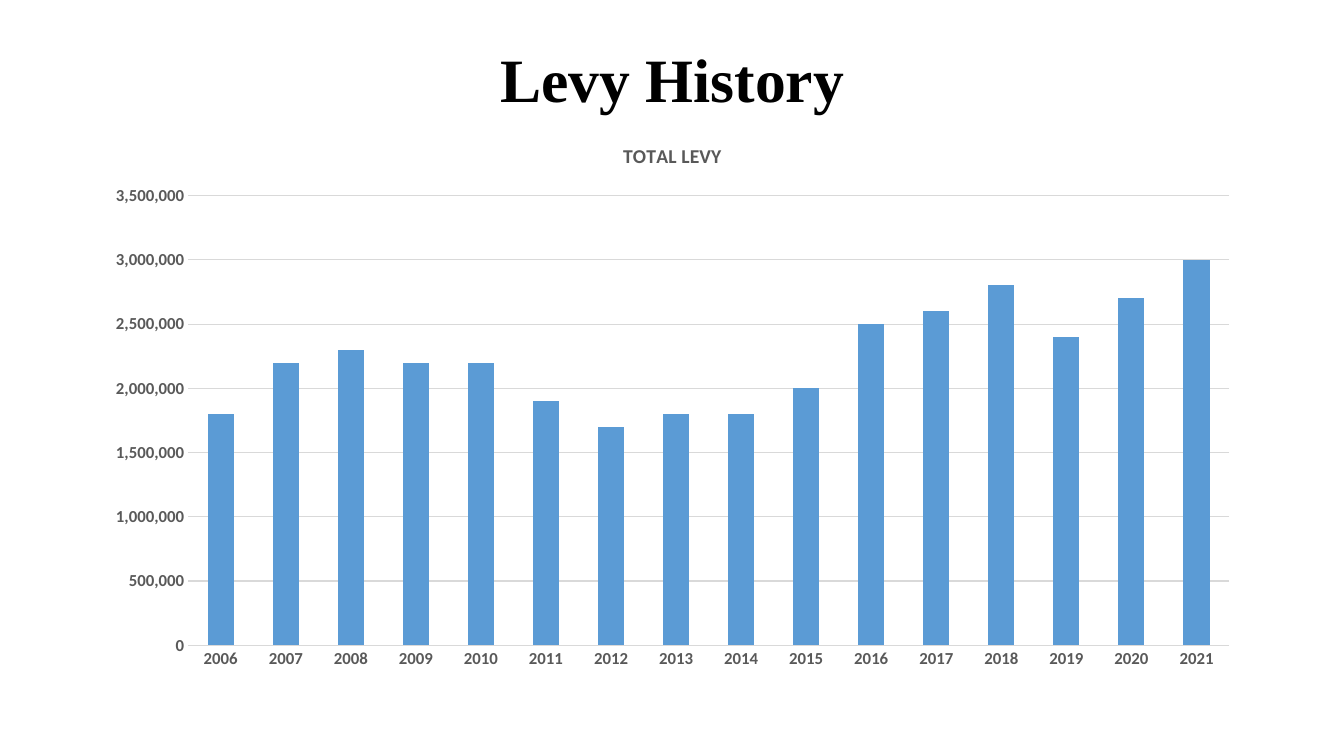
from pptx import Presentation
from pptx.chart.data import CategoryChartData
from pptx.dml.color import RGBColor
from pptx.enum.chart import XL_CHART_TYPE, XL_TICK_MARK
from pptx.enum.text import MSO_ANCHOR, PP_ALIGN
from pptx.util import Inches, Pt

COLOURS = {"title": "000000", "label": "595959", "grid": "D9D9D9", "bar": "5B9BD5"}
YEARS = range(2006, 2022)
LEVY_MILLIONS = [1.8, 2.2, 2.3, 2.2, 2.2, 1.9, 1.7, 1.8,
                 1.8, 2.0, 2.5, 2.6, 2.8, 2.4, 2.7, 3.0]


class LevyPage:
    def __init__(self, deck):
        self.page = deck.slides.add_slide(deck.slide_layouts[6])
        self.heading_font = "Times New Roman"
        self.chart_font = "Calibri"

    def colour(self, name):
        return RGBColor.from_string(COLOURS[name])

    def style_font(self, font, name, size, colour):
        for key, value in {"name": name, "size": Pt(size), "bold": True}.items():
            setattr(font, key, value)
        font.color.rgb = self.colour(colour)

    def add_heading(self, text, left, top, width, height):
        box = self.page.shapes.add_textbox(
            Inches(left), Inches(top), Inches(width), Inches(height))
        frame = box.text_frame
        frame.word_wrap = True
        frame.vertical_anchor = MSO_ANCHOR.MIDDLE
        para = frame.paragraphs[0]
        para.alignment = PP_ALIGN.CENTER
        para.line_spacing = 0.9
        span = para.add_run()
        span.text = text
        self.style_font(span.font, self.heading_font, 44, "title")

    def style_axis(self, axis):
        marks = {"major_tick_mark": XL_TICK_MARK.NONE,
                 "minor_tick_mark": XL_TICK_MARK.NONE}
        for key, value in marks.items():
            setattr(axis, key, value)
        axis.format.line.fill.background()
        self.style_font(axis.tick_labels.font, self.chart_font, 12, "label")

    def add_column_chart(self, title, categories, values, left, top, width, height):
        data = CategoryChartData(number_format="#,##0")
        data.categories = categories
        data.add_series(title, values)
        chart = self.page.shapes.add_chart(
            XL_CHART_TYPE.COLUMN_CLUSTERED, Inches(left), Inches(top),
            Inches(width), Inches(height), data).chart
        chart.font.name = self.chart_font
        chart.font.size = Pt(10)
        chart.has_legend = False
        chart.has_title = True
        chart.chart_title.include_in_layout = False
        span = chart.chart_title.text_frame.paragraphs[0].add_run()
        span.text = title
        self.style_font(span.font, self.chart_font, 14, "label")

        for axis in (chart.category_axis, chart.value_axis):
            self.style_axis(axis)
        scale = {"minimum_scale": 0, "maximum_scale": 3500000, "major_unit": 500000,
                 "has_major_gridlines": True}
        for key, value in scale.items():
            setattr(chart.value_axis, key, value)
        labels = chart.value_axis.tick_labels
        labels.number_format = "#,##0"
        labels.number_format_is_linked = False
        grid = chart.value_axis.major_gridlines.format.line
        grid.color.rgb = self.colour("grid")
        grid.width = Pt(0.75)

        plot = chart.plots[0]
        plot.gap_width = 150
        plot.vary_by_categories = False
        fill = plot.series[0].format.fill
        fill.solid()
        fill.fore_color.rgb = self.colour("bar")


def main():
    deck = Presentation()
    deck.slide_width = Inches(13.33)
    deck.slide_height = Inches(7.5)
    levy = LevyPage(deck)
    levy.add_heading("Levy History", 0.92, 0.37, 11.5, 0.89)
    levy.add_column_chart(
        "TOTAL LEVY", [str(year) for year in YEARS],
        [round(amount * 1000000) for amount in LEVY_MILLIONS], 0.92, 1.21, 11.5, 5.54)
    deck.save("out.pptx")


if __name__ == "__main__":
    main()
